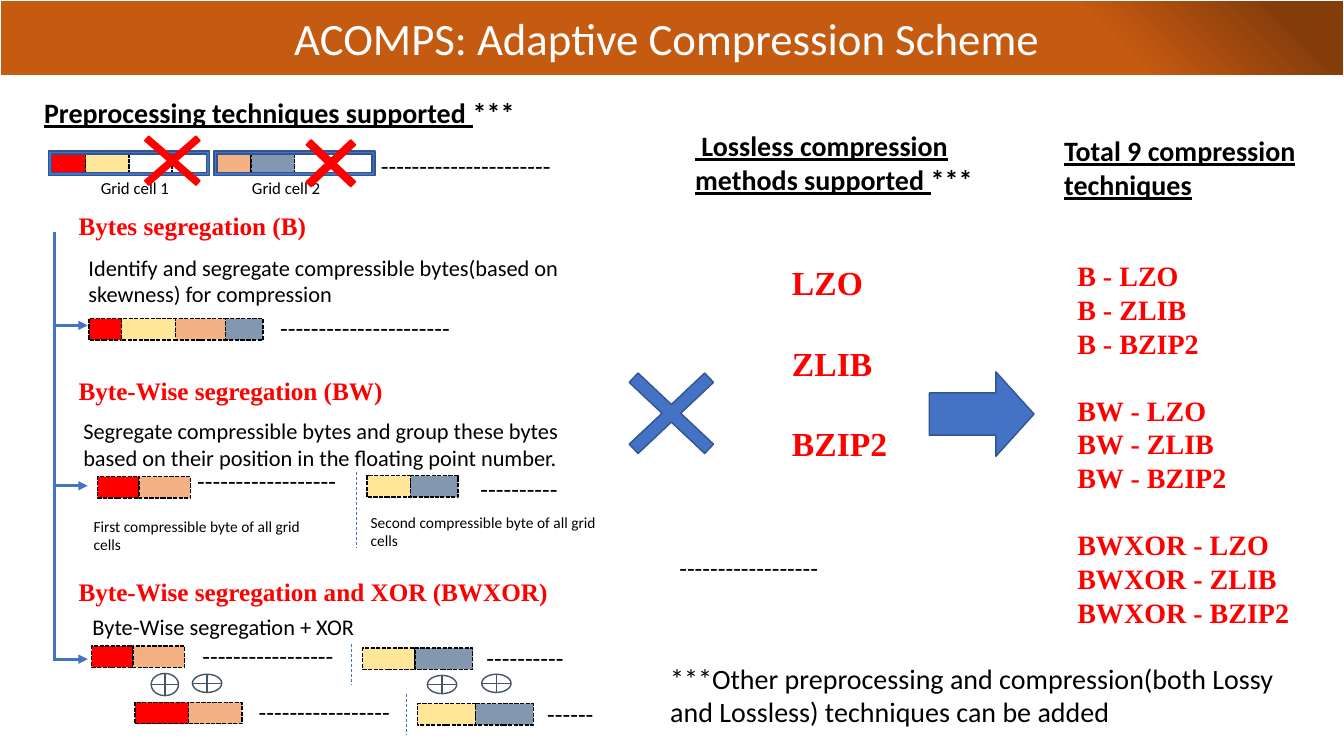
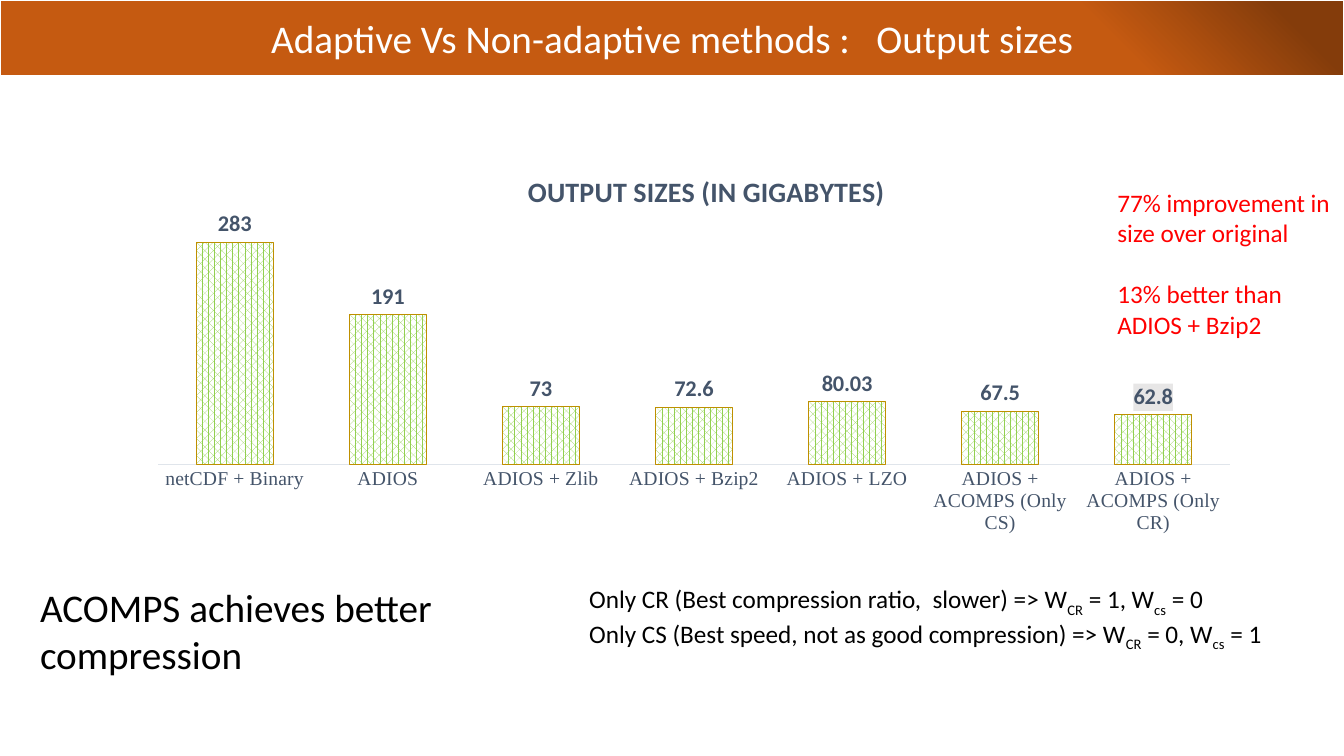
from typing import NamedTuple

from lxml import etree
from pptx import Presentation
from pptx.chart.data import CategoryChartData
from pptx.dml.color import RGBColor
from pptx.enum.chart import XL_CHART_TYPE, XL_LABEL_POSITION, XL_TICK_MARK
from pptx.enum.dml import MSO_LINE, MSO_PATTERN
from pptx.enum.shapes import MSO_CONNECTOR, MSO_SHAPE
from pptx.enum.text import MSO_ANCHOR, PP_ALIGN
from pptx.oxml import parse_xml
from pptx.oxml.ns import nsdecls, qn
from pptx.util import Cm, Pt

RECTANGLE, FRAME = MSO_SHAPE.RECTANGLE, MSO_SHAPE.FRAME
CROSS, ARROW, XOR = MSO_SHAPE.MATH_MULTIPLY, MSO_SHAPE.RIGHT_ARROW, MSO_SHAPE.FLOWCHART_OR
STRAIGHT = MSO_CONNECTOR.STRAIGHT
SHORT_DASH, DOT, DASH = MSO_LINE.SQUARE_DOT, MSO_LINE.ROUND_DOT, MSO_LINE.DASH
CENTER, MIDDLE = PP_ALIGN.CENTER, MSO_ANCHOR.MIDDLE

COLORS = {
    "white": "FFFFFF", "black": "000000", "red": "FF0000", "yellow": "FFE699",
    "peach": "F4B183", "slate": "8497B0", "blue": "4472C4", "navy": "325491",
    "ink": "44546A", "orange": "C55A11", "brown": "843C0B", "green": "92D050",
    "gold": "BF9000", "axis": "E0E5EB", "shade": "E7E6E6",
}
BODY = {"name": "Calibri", "size": Pt(16), "bold": False, "color": "black"}
ACCENT = {"name": "Times New Roman", "size": Pt(18), "bold": True, "color": "red"}
COLUMN_HEAD = {**BODY, "size": Pt(20), "bold": True, "underline": True}
NOTE = {**BODY, "size": Pt(18)}

# Preprocessing sections; offsets in cm from the section's corner
SECTIONS = [
    {"top": 5.18, "heading": "Bytes segregation (B)",
     "text": "Identify and segregate compressible bytes(based on skewness) for compression",
     "text_at": (0.25, 1.09, 14.2),
     "rows": [(0.51, 2.85, [(0.82, "red"), (1.36, "yellow"), (1.27, "peach"), (0.94, "slate")])],
     "dashes": [(5.08, 2.57, 22)]},
    {"top": 9.33, "heading": "Byte-Wise segregation (BW)",
     "text": "Segregate compressible bytes and group these bytes based on their position"
             " in the floating point number.",
     "text_at": (0.12, 1.06, 13.16),
     "rows": [(0.73, 2.68, [(1.04, "red"), (1.3, "peach")]),
              (7.52, 2.66, [(1.09, "yellow"), (1.2, "slate")])],
     "dashes": [(2.99, 2.28, 18), (10.13, 2.46, 10)],
     "dividers": [(7.25, 2.56, 1.9)],
     "captions": [(0.38, 3.57, "First compressible byte of all grid cells"),
                  (7.36, 3.47, "Second compressible byte of all grid cells")]},
    {"top": 14.4, "heading": "Byte-Wise segregation and XOR (BWXOR)",
     "text": "Byte-Wise segregation + XOR",
     "text_at": (0.35, 0.92, 13),
     "rows": [(0.58, 1.88, [(1.04, "red"), (1.3, "peach")]),
              (7.41, 1.93, [(1.32, "yellow"), (1.45, "slate")]),
              (1.67, 3.3, [(1.35, "red"), (1.35, "peach")]),
              (8.79, 3.33, [(1.47, "yellow"), (1.45, "slate")])],
     "dashes": [(3.12, 1.6, 17), (10.28, 1.65, 10), (4.54, 3.02, 17), (11.81, 3.08, 6)],
     "dividers": [(7.13, 1.83, 1.02), (8.51, 3.08, 1.02)],
     "xors": [(2.08, 2.57, 0.69, 0.56), (3.12, 2.59, 0.74, 0.46),
              (9.04, 2.62, 0.74, 0.46), (10.41, 2.59, 0.74, 0.46)]},
]
METHODS = ["LZO", "ZLIB", "BZIP2"]
OUTPUT_SIZES = {
    "netCDF + Binary": 283, "ADIOS": 191, "ADIOS + Zlib": 73, "ADIOS + Bzip2": 72.6,
    "ADIOS + LZO": 80.03, "ADIOS + ACOMPS (Only CS)": 67.5, "ADIOS + ACOMPS (Only CR)": 62.8,
}


class Box(NamedTuple):
    """A region in cm."""
    left: float
    top: float
    width: float
    height: float

    def inner(self, left, top, width, height):
        return Box(self.left + left, self.top + top, width, height)

    def lengths(self):
        return [Cm(value) for value in self]


# Shared helpers

def color(name):
    return RGBColor.from_string(COLORS[name])


def set_font(font, style):
    for name, value in style.items():
        if name == "color":
            font.color.rgb = color(value)
        elif name == "baseline":
            font._element.set("baseline", str(value))
        else:
            setattr(font, name, value)


def write(frame, paragraphs, style, **para_format):
    """Each paragraph is a string or a list of (text, style changes)."""
    frame.word_wrap = True
    for index, content in enumerate(paragraphs):
        para = frame.paragraphs[0] if index == 0 else frame.add_paragraph()
        for name, value in para_format.items():
            setattr(para, name, value)
        spans = [(content, {})] if isinstance(content, str) else content
        for text, changes in spans:
            span = para.add_run()
            span.text = text
            set_font(span.font, {**style, **changes})
    return frame


def add_text(page, box, paragraphs, style, **para_format):
    frame = page.shapes.add_textbox(*box.lengths()).text_frame
    return write(frame, paragraphs, style, **para_format)


def add_shape(page, kind, box, fill, line, dash=None, adjustments=()):
    shape = page.shapes.add_shape(kind, *box.lengths())
    shape.shadow.inherit = False
    if fill:
        shape.fill.solid()
        shape.fill.fore_color.rgb = color(fill)
    else:
        shape.fill.background()
    shape.line.color.rgb = color(line)
    shape.line.width = Pt(1)
    if dash:
        shape.line.dash_style = dash
    for index, value in enumerate(adjustments):
        shape.adjustments[index] = value
    return shape


def add_line(page, start, end, width, dash=None, arrow=False):
    line = page.shapes.add_connector(STRAIGHT, *[Cm(value) for value in start + end])
    line.line.color.rgb = color("blue")
    line.line.width = Pt(width)
    if dash:
        line.line.dash_style = dash
    if arrow:
        etree.SubElement(line.line._get_or_add_ln(), qn("a:tailEnd"), type="triangle")
    etree.SubElement(line._element.spPr, qn("a:effectLst"))


def add_dashes(page, box, left, top, count):
    add_text(page, box.inner(left, top, 0.2 * count + 0.7, 1), ["-" * count], NOTE)


def add_cells(page, box, left, top, height, cells):
    """Adjacent byte cells, each (width, fill) or (width, fill, dash)."""
    for width, fill, *dash in cells:
        add_shape(page, RECTANGLE, box.inner(left, top, width, height), fill, "black",
                  dash[0] if dash else SHORT_DASH)
        left += width


def title_band(page, title, size):
    band = add_shape(page, RECTANGLE, Box(0, 0, 33.87, 1.9), None, "white")
    stops = "".join(
        f'<a:gs pos="{place}"><a:srgbClr val="{COLORS[name]}"/></a:gs>'
        for place, name in [(5000, "brown"), (19000, "orange")])
    gradient = parse_xml(
        f'<a:gradFill {nsdecls("a")} rotWithShape="1"><a:gsLst>{stops}</a:gsLst>'
        '<a:path path="circle"><a:fillToRect l="100000" b="100000"/></a:path></a:gradFill>')
    properties = band._element.spPr
    properties.replace(properties.find(qn("a:noFill")), gradient)
    band.text_frame.vertical_anchor = MIDDLE
    write(band.text_frame, [title], {**BODY, "size": Pt(size), "color": "white"},
          alignment=CENTER)


# Regions of the scheme slide

def grid_cells(page, box):
    add_text(page, box.inner(-0.36, -1.52, 12.85, 1.12),
             [[("Preprocessing techniques supported ", {}), ("***", {"underline": False})]],
             COLUMN_HEAD)
    # left, fills, cross box, cross thickness, label left
    grids = [(0, ("red", "yellow"), (1.88, -0.84, 2.49, 2.16), 0.071, 1.07),
             (4.17, ("peach", "slate"), (6.04, -0.71, 2.16, 2.03), 0.086, 4.88)]
    for number, (left, fills, cross, thickness, label) in enumerate(grids, 1):
        cells = [(0.94, fills[0]), (1.09, fills[1]), (1.09, None), (0.94, None, DOT)]
        add_cells(page, box, left, 0.02, 0.57, cells)
        add_shape(page, FRAME, box.inner(left, 0, 4.06, 0.61), "blue", "navy")
        add_text(page, box.inner(label, 0.54, 3.12, 0.76), [f"Grid cell {number}"],
                 {**BODY, "size": Pt(12)})
        add_shape(page, CROSS, box.inner(*cross), "red", "red", adjustments=[thickness])
    add_dashes(page, box, 8.13, -0.15, 22)


def section(page, box, parts):
    add_text(page, box.inner(0, 0, 14, 0.95), [parts["heading"]], ACCENT)
    left, top, width = parts["text_at"]
    add_text(page, box.inner(left, top, width, 1.6), [parts["text"]], BODY)
    for left, top, cells in parts["rows"]:
        add_cells(page, box, left, top, 0.54, cells)
    for left, top, count in parts["dashes"]:
        add_dashes(page, box, left, top, count)
    for left, top, height in parts.get("dividers", []):
        x, y = box.left + left, box.top + top
        add_line(page, (x, y), (x, y + height), 0.5, DASH)
    for left, top, caption in parts.get("captions", []):
        add_text(page, box.inner(left, top, 6.3, 1.19), [caption], {**BODY, "size": Pt(11)})
    for xor in parts.get("xors", []):
        add_shape(page, XOR, box.inner(*xor), "white", "ink")


def spine(page, box):
    add_line(page, (box.left, box.top), (box.left, box.top + box.height), 2.25)
    for drop in (2.36, 6.4, 10.77):
        y = box.top + drop
        add_line(page, (box.left, y), (box.left + box.width, y), 2.25, arrow=True)


def lossless_methods(page, box):
    add_text(page, box.inner(0, 0, 7.52, 1.96),
             [[(" Lossless compression methods supported ", {}), ("***", {"underline": False})]],
             COLUMN_HEAD)
    frame = add_text(page, box.inner(2.44, 3.36, 3.2, 5.38), METHODS,
                     {**ACCENT, "size": Pt(24)}, line_spacing=Pt(28.8))
    for para in frame.paragraphs[1:]:
        para.space_before = Pt(28.8)
    add_dashes(page, box, -0.4, 10.67, 18)
    add_shape(page, CROSS, box.inner(-2.18, 5.57, 3.66, 3.45), "blue", "navy",
              adjustments=[0.094])
    add_shape(page, ARROW, box.inner(6.15, 6.25, 2.64, 2.13), "blue", "navy",
              adjustments=[0.5, 0.452])


def combinations(page, box):
    add_text(page, box.inner(0, 0, 6.5, 1.96), ["Total 9 compression techniques"], COLUMN_HEAD)
    names = [f"{prefix} - {method}" for prefix in ("B", "BW", "BWXOR") for method in METHODS]
    frame = add_text(page, box.inner(0.33, 3.15, 6.4, 9.65), names,
                     {**ACCENT, "size": Pt(20)}, line_spacing=Pt(24))
    for start in (3, 6):
        frame.paragraphs[start].space_before = Pt(24)


def scheme_slide(page):
    title_band(page, "ACOMPS: Adaptive Compression Scheme ", 32)
    grid_cells(page, Box(1.22, 3.81, 13, 0.61))
    for parts in SECTIONS:
        section(page, Box(1.73, parts["top"], 14, 4.1), parts)
    spine(page, Box(1.37, 5.84, 0.84, 10.82))
    lossless_methods(page, Box(17.27, 3.12, 7.52, 12))
    combinations(page, Box(26.57, 3.25, 6.73, 12.8))
    add_text(page, Box(16.64, 16.54, 16.33, 1.96),
             ["***Other preprocessing and compression(both Lossy and Lossless)"
              " techniques can be added"], {**BODY, "size": Pt(20)})


# Regions of the output size slide

def set_layout(parent, position, places):
    """Fix a chart part at the given fractions of the chart."""
    for old in parent.findall(qn("c:layout")):
        parent.remove(old)
    marks = "".join(f'<c:{name} val="{value}"/>' for name, value in places.items())
    parent.insert(position, parse_xml(
        f'<c:layout {nsdecls("c")}><c:manualLayout>{marks}</c:manualLayout></c:layout>'))


def size_chart(page, box):
    data = CategoryChartData()
    data.categories = list(OUTPUT_SIZES)
    data.add_series("Series 1", list(OUTPUT_SIZES.values()))
    chart = page.shapes.add_chart(XL_CHART_TYPE.COLUMN_CLUSTERED, *box.lengths(), data).chart
    chart.has_legend = False
    set_font(chart.font, {**BODY, "size": Pt(10)})

    # Title and plot area
    label_style = {**BODY, "bold": True, "color": "ink"}
    write(chart.chart_title.text_frame, ["OUTPUT SIZES (IN GIGABYTES)"],
          {**label_style, "size": Pt(20)})
    edges = {"xMode": "edge", "yMode": "edge"}
    set_layout(chart.chart_title._element, 1, {**edges, "x": 0.34, "y": 0.05})
    set_layout(chart._chartSpace.chart.plotArea, 0, {
        "layoutTarget": "inner", **edges, "x": 0.01, "y": 0.21, "w": 0.97, "h": 0.61})

    # Axes
    values, names = chart.value_axis, chart.category_axis
    values.visible = values.has_major_gridlines = False
    values.minimum_scale, values.maximum_scale = 0, 300
    names.major_tick_mark = XL_TICK_MARK.NONE
    names.format.line.color.rgb = color("axis")
    names.format.line.width = Pt(0.75)
    set_font(names.tick_labels.font,
             {**ACCENT, "size": Pt(14), "bold": False, "color": "ink"})

    # Columns and their labels
    plot = chart.plots[0]
    plot.gap_width, plot.overlap, plot.vary_by_categories = 100, -24, False
    series = plot.series[0]
    fill = series.format.fill
    fill.patterned()
    fill.pattern = MSO_PATTERN.PERCENT_60
    fill.fore_color.rgb, fill.back_color.rgb = color("green"), color("white")
    series.format.line.color.rgb = color("gold")
    series.format.line.width = Pt(0.75)
    best = series.points[len(OUTPUT_SIZES) - 1].data_label
    series.data_labels.show_value = True
    for labels in (series.data_labels, best):
        set_font(labels.font, label_style)
        labels.position = XL_LABEL_POSITION.OUTSIDE_END
    shade = parse_xml(
        f'<c:spPr {nsdecls("c", "a")}><a:solidFill><a:srgbClr val="{COLORS["shade"]}"/>'
        '</a:solidFill></c:spPr>')
    best._dLbl.find(qn("c:txPr")).addprevious(shade)


def weight_notes(page, box):
    low = {"baseline": -25000}
    cases = [("Only CR (Best compression ratio,  slower)", 1, 0),
             ("Only CS (Best speed, not as good compression)", 0, 1)]
    add_text(page, box, [
        [(f"{case} => W", {}), ("CR", low), (f" = {ratio}, W", {}), ("cs", low),
         (f" = {speed}", {})] for case, ratio, speed in cases], NOTE)


def sizes_slide(page):
    title_band(page, "Adaptive Vs Non-adaptive methods :   Output sizes", 28)
    size_chart(page, Box(3.71, 3.73, 27.84, 9.73))
    add_text(page, Box(0.76, 14.58, 12.45, 2.64), ["ACOMPS achieves better compression"],
             {**BODY, "size": Pt(28)})
    gains = add_text(page, Box(27.91, 4.6, 5.96, 4.11),
                     ["77% improvement in size over original", "13% better than ADIOS + Bzip2"],
                     {**NOTE, "color": "red"})
    gains.paragraphs[1].space_before = Pt(22)
    weight_notes(page, Box(14.6, 14.58, 18.26, 1.8))


def main():
    deck = Presentation()
    deck.slide_width, deck.slide_height = Cm(33.87), Cm(19.05)
    for build in (scheme_slide, sizes_slide):
        build(deck.slides.add_slide(deck.slide_layouts[6]))
    deck.save("out.pptx")


if __name__ == "__main__":
    main()
